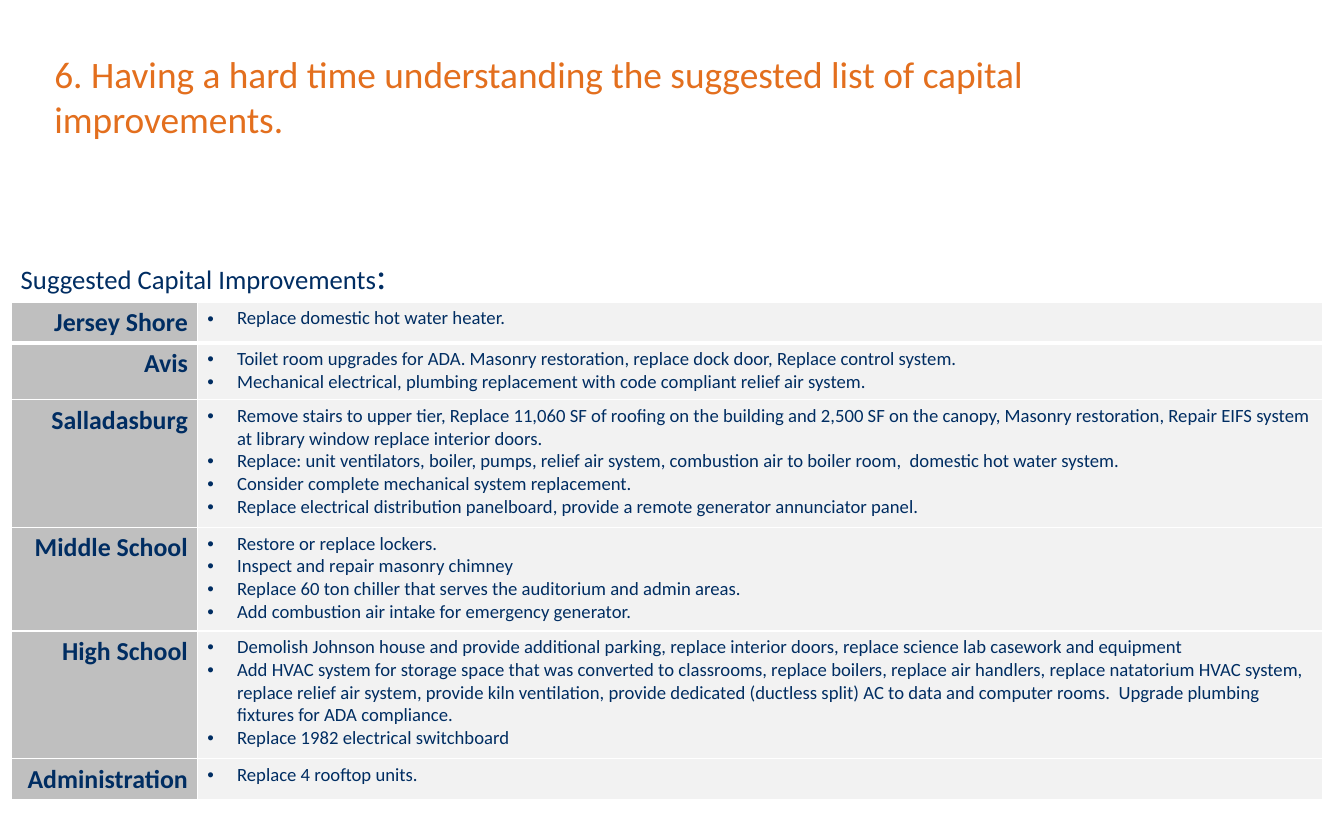
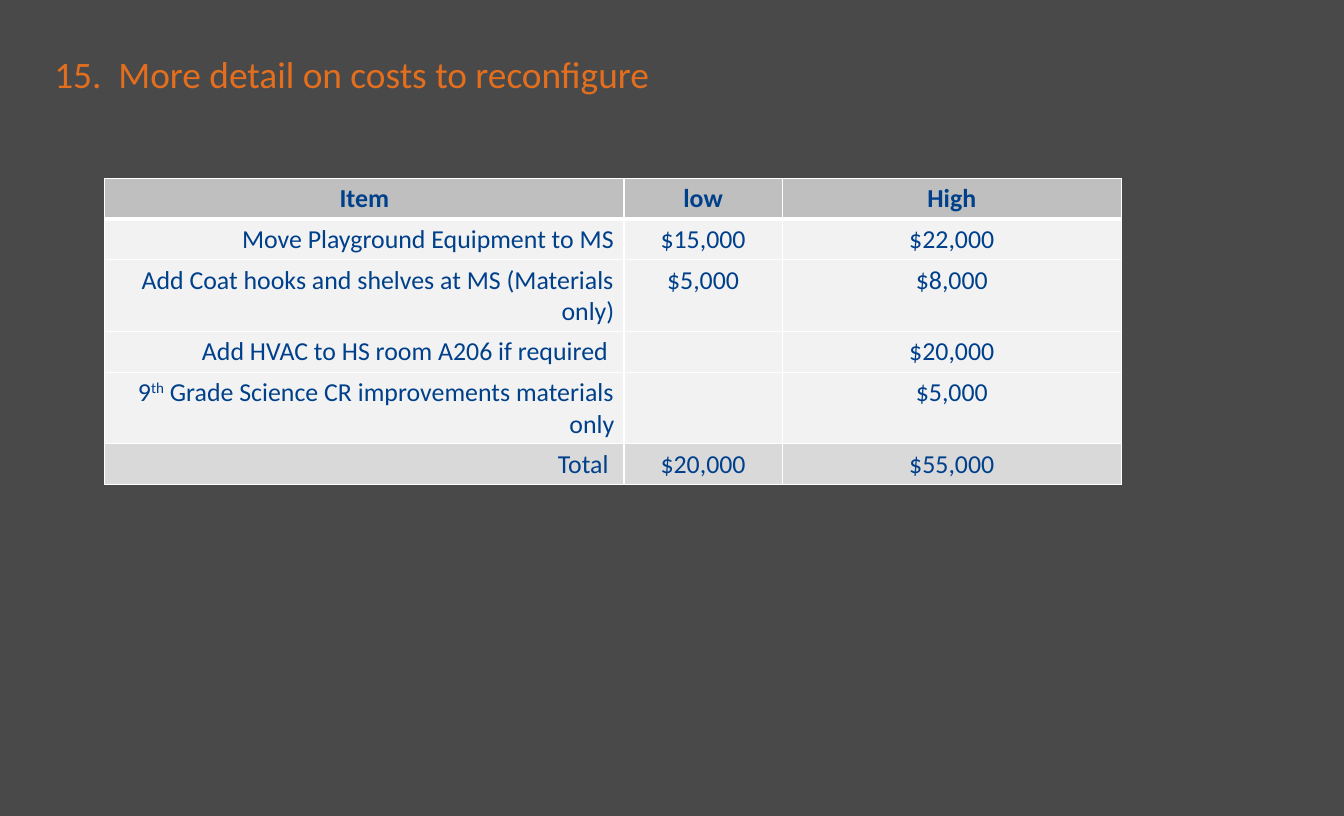
from lxml.etree import SubElement
from pptx import Presentation
from pptx.dml.color import RGBColor
from pptx.enum.text import MSO_AUTO_SIZE as AutoSize, PP_ALIGN as Align
from pptx.oxml.ns import qn
from pptx.util import Cm, Pt

WHITE, CHARCOAL = "FFFFFF", "494949"
ORANGE, NAVY, BLUE = "E36F1E", "002D62", "00408B"
HEADER_GREY, TOTAL_GREY, PALE_GREY = "BFBFBF", "D9D9D9", "F2F2F2"

TITLE = {"size": Pt(28), "color": ORANGE}
SUBTITLE = {"size": Pt(20), "color": NAVY}
SUBTITLE_COLON = {"size": Pt(28), "color": NAVY}
SCHOOL = {"size": Pt(19.4), "color": NAVY, "bold": True}
IMPROVEMENT = {"size": Pt(14), "color": NAVY, "bold": False}
COST_HEADER = {"size": Pt(19.4), "color": BLUE, "bold": True}
COST = {"size": Pt(19.4), "color": BLUE, "bold": False}

IMPROVEMENTS = [
    ("Jersey Shore", 1.07, ["Replace domestic hot water heater."]),
    ("Avis", 1.5, [
        "Toilet room upgrades for ADA. Masonry restoration, replace dock door, Replace control system.",
        "Mechanical electrical, plumbing replacement with code compliant relief air system.",
    ]),
    ("Salladasburg", 3.38, [
        "Remove stairs to upper tier, Replace 11,060 SF of roofing on the building and 2,500 SF on "
        "the canopy, Masonry restoration, Repair EIFS system at library window replace interior doors.",
        "Replace: unit ventilators, boiler, pumps, relief air system, combustion air to boiler room,  "
        "domestic hot water system.",
        "Consider complete mechanical system replacement.",
        "Replace electrical distribution panelboard, provide a remote generator annunciator panel.",
    ]),
    ("Middle School", 2.74, [
        "Restore or replace lockers.",
        "Inspect and repair masonry chimney",
        "Replace 60 ton chiller that serves the auditorium and admin areas.",
        "Add combustion air intake for emergency generator.",
    ]),
    ("High School", 3.38, [
        "Demolish Johnson house and provide additional parking, replace interior doors, "
        "replace science lab casework and equipment",
        "Add HVAC system for storage space that was converted to classrooms, replace boilers, "
        "replace air handlers, replace natatorium HVAC system,  replace relief air system, provide "
        "kiln ventilation, provide dedicated (ductless split) AC to data and computer rooms.  "
        "Upgrade plumbing fixtures for ADA compliance.",
        "Replace 1982 electrical switchboard",
    ]),
    ("Administration", 1.07, ["Replace 4 rooftop units."]),
]

COSTS = [
    ("Item", "low", "High"),
    ("Move Playground Equipment to MS", "$15,000", "$22,000"),
    ("Add Coat hooks and shelves at MS (Materials only)", "$5,000", "$8,000"),
    ("Add HVAC to HS room A206 if required ", "", "$20,000"),
    ("9^th^ Grade Science CR improvements materials only", "", "$5,000"),
    ("Total ", "$20,000", "$55,000"),
]


def hex_color(value):
    """Return the colour for a hex string."""
    return RGBColor.from_string(value)


def add_run(paragraph, text, style):
    """Append a run whose font takes the values of the style."""
    run = paragraph.add_run()
    run.text = text
    run.font.name = "Calibri"
    for name, value in style.items():
        if name == "color":
            run.font.color.rgb = hex_color(value)
        else:
            setattr(run.font, name, value)
    return run


def add_rich_text(paragraph, text, style):
    """Write text in which carets enclose superscripts."""
    for index, part in enumerate(text.split("^")):
        if part:
            run = add_run(paragraph, part, style)
            if index % 2:
                run.font._element.set("baseline", "30000")


def add_text(slide, box, parts):
    """Add a wrapping text box of styled parts."""
    shape = slide.shapes.add_textbox(*map(Cm, box))
    shape.text_frame.word_wrap = True
    shape.text_frame.auto_size = AutoSize.SHAPE_TO_FIT_TEXT
    for text, style in parts:
        add_run(shape.text_frame.paragraphs[0], text, style)


def add_slide(presentation, background, title, title_height):
    """Add a blank slide with a background colour and a title."""
    slide = presentation.slides.add_slide(presentation.slide_layouts[6])
    slide.background.fill.solid()
    slide.background.fill.fore_color.rgb = hex_color(background)
    add_text(slide, (1.19, 1.24, 30.02, title_height), [(title, TITLE)])
    return slide


def set_borders(cell, top, bottom):
    """Draw white cell borders, with the given top and bottom widths."""
    properties = cell._tc.get_or_add_tcPr()
    for side, width in {"L": 1, "R": 1, "T": top, "B": bottom}.items():
        line = SubElement(properties, qn(f"a:ln{side}"), w=str(Pt(width)))
        SubElement(SubElement(line, qn("a:solidFill")), qn("a:srgbClr"), val=WHITE)


def add_table(slide, left, top, widths, heights):
    """Add an unbanded table with a thick rule under its first row."""
    box = map(Cm, (left, top, sum(widths), sum(heights)))
    table = slide.shapes.add_table(len(heights), len(widths), *box).table
    table.first_row = table.horz_banding = False
    for column, width in zip(table.columns, widths):
        column.width = Cm(width)
    for index, (row, height) in enumerate(zip(table.rows, heights)):
        row.height = Cm(height)
        for cell in row.cells:
            set_borders(cell, 3 if index == 1 else 1, 3 if index == 0 else 1)
    return table


def fill_cell(cell, fill, lines, style, align=Align.LEFT, bulleted=False):
    """Fill a cell and write one paragraph for each line."""
    cell.fill.solid()
    cell.fill.fore_color.rgb = hex_color(fill)
    for index, text in enumerate(lines):
        frame = cell.text_frame
        paragraph = frame.add_paragraph() if index else frame.paragraphs[0]
        paragraph.alignment = align
        if bulleted:
            add_bullet(paragraph)
        add_rich_text(paragraph, text, style)


def add_bullet(paragraph):
    """Give a paragraph a hanging round bullet."""
    properties = paragraph._p.get_or_add_pPr()
    indent = Cm(0.79)
    properties.set("marL", str(indent))
    properties.set("indent", str(-indent))
    SubElement(properties, qn("a:buFont"), typeface="Arial")
    SubElement(properties, qn("a:buChar"), char="•")


def add_improvements_slide(presentation):
    """Build the slide that lists improvements by school."""
    title = "6. Having a hard time understanding the suggested list of capital improvements."
    slide = add_slide(presentation, WHITE, title, 4.37)
    add_text(slide, (0.3, 6.55, 15.62, 1.45),
             [("Suggested Capital Improvements", SUBTITLE), (":", SUBTITLE_COLON)])
    heights = [height for _, height, _ in IMPROVEMENTS]
    table = add_table(slide, 0.3, 8, (4.93, 29.77), heights)
    for row, (school, _, items) in zip(table.rows, IMPROVEMENTS):
        fill_cell(row.cells[0], HEADER_GREY, [school], SCHOOL, Align.RIGHT)
        fill_cell(row.cells[1], PALE_GREY, items, IMPROVEMENT, bulleted=True)


def add_costs_slide(presentation):
    """Build the slide with the low and high costs."""
    slide = add_slide(presentation, CHARCOAL, "15.  More detail on costs to reconfigure ", 2.13)
    table = add_table(slide, 2.77, 4.72, (13.74, 4.19, 8.97), [1.04] * len(COSTS))
    fills = [HEADER_GREY] + [PALE_GREY] * (len(COSTS) - 2) + [TOTAL_GREY]
    for index, (row, values, fill) in enumerate(zip(table.rows, COSTS, fills)):
        for column, (cell, value) in enumerate(zip(row.cells, values)):
            align = Align.RIGHT if index and not column else Align.CENTER
            fill_cell(cell, fill, [value], COST if index else COST_HEADER, align)


def main():
    """Build and save the presentation."""
    presentation = Presentation()
    presentation.slide_width, presentation.slide_height = Cm(35.56), Cm(21.59)
    add_improvements_slide(presentation)
    add_costs_slide(presentation)
    presentation.save("out.pptx")


if __name__ == "__main__":
    main()
